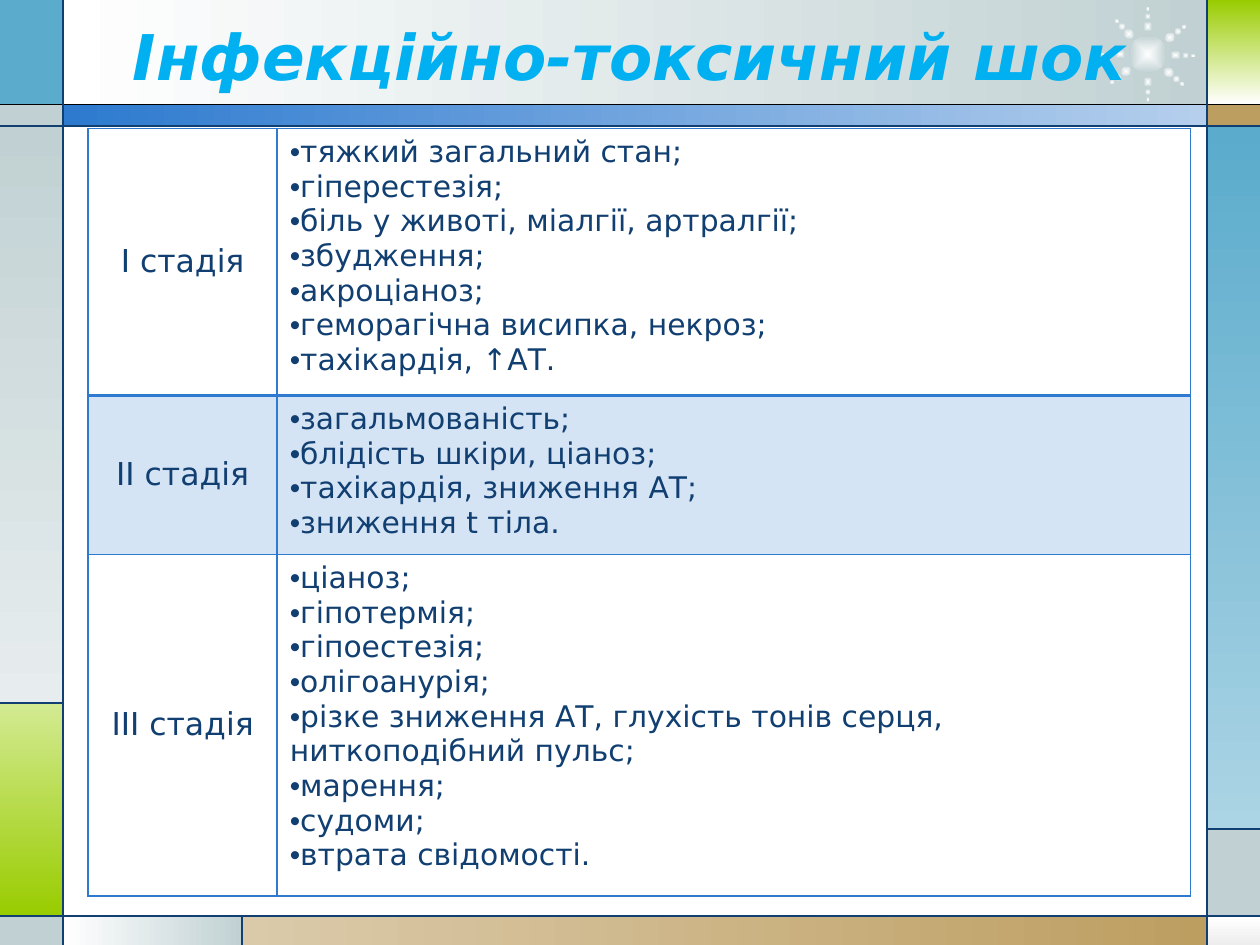
from dataclasses import dataclass
from math import cos, radians, sin
from typing import Optional

from lxml.etree import SubElement
from pptx import Presentation
from pptx.dml.color import RGBColor
from pptx.enum.shapes import MSO_CONNECTOR as Connector, MSO_SHAPE as Shape
from pptx.enum.text import MSO_ANCHOR as Anchor, PP_ALIGN as Align
from pptx.oxml.ns import qn
from pptx.util import Inches, Pt

WIDTH, HEIGHT = 10, 7.5
FONT, BULLET_FONT = "DejaVu Sans", "Arial"
COLORS = {
    "white": "FFFFFF", "silver": "EDEDED", "gray": "C1D1D3", "mist": "E7EDEE",
    "teal": "5AABCC", "sky": "ABD4E4", "green": "99CC00", "lime": "D3EA92",
    "tan": "BD9E61", "sand": "DBCAAA", "blue": "2D7ACF", "ice": "B5CFED",
    "navy": "113F71", "black": "000000", "title": "00B0F0",
}
# Grid edges of the frame, in inches
COLUMNS = (0, 0.5, 1.92, 9.58, 10)
ROWS = (0, 0.83, 1, 5.58, 6.58, 7.27, 7.5)
RAY_ANGLES = (2, 41, 90, 142, 180, 227, 270, 323)
# Distance from the centre, width and height of the dots on a ray
RAY_DOTS = ((0.22, 0.08, 0.07), (0.3, 0.05, 0.05), (0.36, 0.04, 0.03))


@dataclass
class Panel:
    """A frame rectangle between two column edges and two row edges."""
    columns: tuple[int, int]
    rows: tuple[int, int]
    start: str
    end: Optional[str] = None
    angle: int = 0


@dataclass
class Divider:
    start: tuple[int, int]
    end: tuple[int, int]
    color: str = "navy"


@dataclass
class Stage:
    name: str
    height: float
    signs: tuple[str, ...]
    shaded: bool = False


PANELS = (
    Panel((1, 3), (0, 1), "white", "gray"),
    Panel((0, 1), (0, 1), "teal"),
    Panel((0, 1), (1, 2), "gray"),
    Panel((0, 1), (2, 3), "gray", "mist", 90),
    Panel((0, 1), (3, 5), "lime", "green", 90),
    Panel((0, 1), (5, 6), "gray"),
    Panel((1, 2), (5, 6), "white", "gray"),
    Panel((2, 3), (5, 6), "sand", "tan"),
    Panel((3, 4), (5, 6), "white", "silver", 90),
    Panel((3, 4), (4, 5), "gray"),
    Panel((3, 4), (2, 4), "teal", "sky", 90),
    Panel((3, 4), (1, 2), "tan"),
    Panel((3, 4), (0, 1), "green", "white", 90),
    Panel((1, 3), (1, 2), "blue", "ice"),
)
DIVIDERS = (
    Divider((0, 1), (4, 1), "black"),
    Divider((0, 2), (4, 2)),
    Divider((0, 5), (4, 5)),
    Divider((1, 0), (1, 6)),
    Divider((3, 0), (3, 6)),
    Divider((0, 3), (1, 3)),
    Divider((2, 5), (2, 6)),
    Divider((3, 4), (4, 4)),
)
STAGES = (
    Stage("І стадія", 2.12, (
        "тяжкий загальний стан;", "гіперестезія;",
        "біль у животі, міалгії, артралгії;", "збудження;", "акроціаноз;",
        "геморагічна висипка, некроз;", "тахікардія, ↑АТ.")),
    Stage("ІІ стадія", 1.26, (
        "загальмованість;", "блідість шкіри, ціаноз;",
        "тахікардія, зниження АТ;", "зниження t тіла."), shaded=True),
    Stage("ІІІ стадія", 2.71, (
        "ціаноз;", "гіпотермія;", "гіпоестезія;", "олігоанурія;",
        "різке зниження АТ, глухість тонів серця, ниткоподібний пульс;",
        "марення;", "судоми;", "втрата свідомості.")),
)


def rgb(name: str) -> RGBColor:
    return RGBColor.from_string(COLORS[name])


def fill_shape(shape, start: str, end: Optional[str] = None, angle: int = 0) -> None:
    shape.shadow.inherit = False
    shape.line.fill.background()
    if end is None:
        shape.fill.solid()
        shape.fill.fore_color.rgb = rgb(start)
        return
    shape.fill.gradient()
    shape.fill.gradient_angle = -angle % 360
    for stop, color, position in zip(shape.fill.gradient_stops, (start, end), (0, 1)):
        stop.color.rgb = rgb(color)
        stop.position = position


def make_radial(shape) -> None:
    """Turn the linear gradient of a shape into one that spreads from its centre."""
    gradient = shape._element.spPr.find(qn("a:gradFill"))
    gradient.remove(gradient.find(qn("a:lin")))
    radial = SubElement(gradient, qn("a:path"), {"path": "shape"})
    SubElement(radial, qn("a:fillToRect"), dict.fromkeys("ltrb", "50000"))


def add_panel(slide, panel: Panel) -> None:
    left, right = (COLUMNS[i] for i in panel.columns)
    top, bottom = (ROWS[i] for i in panel.rows)
    shape = slide.shapes.add_shape(Shape.RECTANGLE, Inches(left), Inches(top),
                                   Inches(right - left), Inches(bottom - top))
    fill_shape(shape, panel.start, panel.end, panel.angle)


def add_divider(slide, divider: Divider) -> None:
    ends = [Inches(edge) for column, row in (divider.start, divider.end)
            for edge in (COLUMNS[column], ROWS[row])]
    line = slide.shapes.add_connector(Connector.STRAIGHT, *ends)
    line.line.color.rgb = rgb(divider.color)
    line.line.width = Pt(0.75)
    SubElement(line._element.spPr, qn("a:effectLst"))


def add_sparkle(slide, center_x: float, center_y: float) -> None:
    """Draw a glowing disc with eight rays of three shrinking dots."""
    group = slide.shapes.add_group_shape()

    def add_dot(radius: float, angle: float, width: float, height: float) -> None:
        x = center_x + radius * cos(radians(angle))
        y = center_y + radius * sin(radians(angle))
        dot = group.shapes.add_shape(Shape.OVAL, Inches(x - width / 2), Inches(y - height / 2),
                                     Inches(width), Inches(height))
        dot.rotation = angle
        fill_shape(dot, "white", "gray")
        make_radial(dot)

    add_dot(0, 0, 0.3, 0.3)
    for angle in RAY_ANGLES:
        for radius, width, height in RAY_DOTS:
            add_dot(radius, angle, width, height)


def write_text(frame, *lines: str, size: float, color: str = "navy", align=Align.LEFT,
               bold: bool = False, italic: bool = False, bullet: Optional[str] = None) -> None:
    frame.word_wrap = True
    for index, line in enumerate(lines):
        paragraph = frame.add_paragraph() if index else frame.paragraphs[0]
        paragraph.alignment = align
        if bullet:
            properties = paragraph._p.get_or_add_pPr()
            properties.set("marL", "0")
            properties.set("indent", "0")
            SubElement(properties, qn("a:buFont"), {"typeface": BULLET_FONT})
            SubElement(properties, qn("a:buChar"), {"char": bullet})
        run = paragraph.add_run()
        run.text = line
        font = run.font
        font.name, font.size, font.bold, font.italic = FONT, Pt(size), bold, italic
        font.color.rgb = rgb(color)


def style_cell(cell, shaded: bool, edge_widths: dict[str, float]) -> None:
    properties = cell._tc.get_or_add_tcPr()
    for side, width in edge_widths.items():
        edge = SubElement(properties, qn(f"a:ln{side}"), {"w": str(Pt(width))})
        solid = SubElement(edge, qn("a:solidFill"))
        SubElement(solid, qn("a:srgbClr"), {"val": COLORS["blue"]})
    if shaded:
        cell.fill.solid()
        cell.fill.fore_color.rgb = rgb("blue")
        SubElement(properties.find(qn("a:solidFill"))[0], qn("a:alpha"), {"val": "20000"})
    else:
        cell.fill.background()


def add_stage_table(slide) -> None:
    table = slide.shapes.add_table(len(STAGES), 2, Inches(0.7), Inches(1.02), Inches(8.75),
                                   Inches(sum(stage.height for stage in STAGES))).table
    table.first_row = table.horz_banding = False
    for column, width in zip(table.columns, (1.5, 7.25)):
        column.width = Inches(width)
    for index, stage in enumerate(STAGES):
        table.rows[index].height = Inches(stage.height)
        name, signs = table.cell(index, 0), table.cell(index, 1)
        name.vertical_anchor = Anchor.MIDDLE
        write_text(name.text_frame, stage.name, size=18, align=Align.CENTER)
        write_text(signs.text_frame, *stage.signs, size=17, bullet="•")
        widths = {"L": 1, "R": 1, "T": 2 if index == 1 else 1, "B": 2 if index == 0 else 1}
        for cell in (name, signs):
            style_cell(cell, stage.shaded, widths)


def main() -> None:
    presentation = Presentation()
    presentation.slide_width, presentation.slide_height = Inches(WIDTH), Inches(HEIGHT)
    slide = presentation.slides.add_slide(presentation.slide_layouts[6])
    for panel in PANELS:
        add_panel(slide, panel)
    add_sparkle(slide, 9.11, 0.43)
    for divider in DIVIDERS:
        add_divider(slide, divider)
    title = slide.shapes.add_textbox(Inches(0.47), Inches(0.13), Inches(9.06), Inches(0.62))
    title.text_frame.vertical_anchor = Anchor.MIDDLE
    write_text(title.text_frame, "Інфекційно-токсичний шок", size=36, color="title",
               align=Align.CENTER, bold=True, italic=True)
    add_stage_table(slide)
    presentation.save("out.pptx")


if __name__ == "__main__":
    main()
